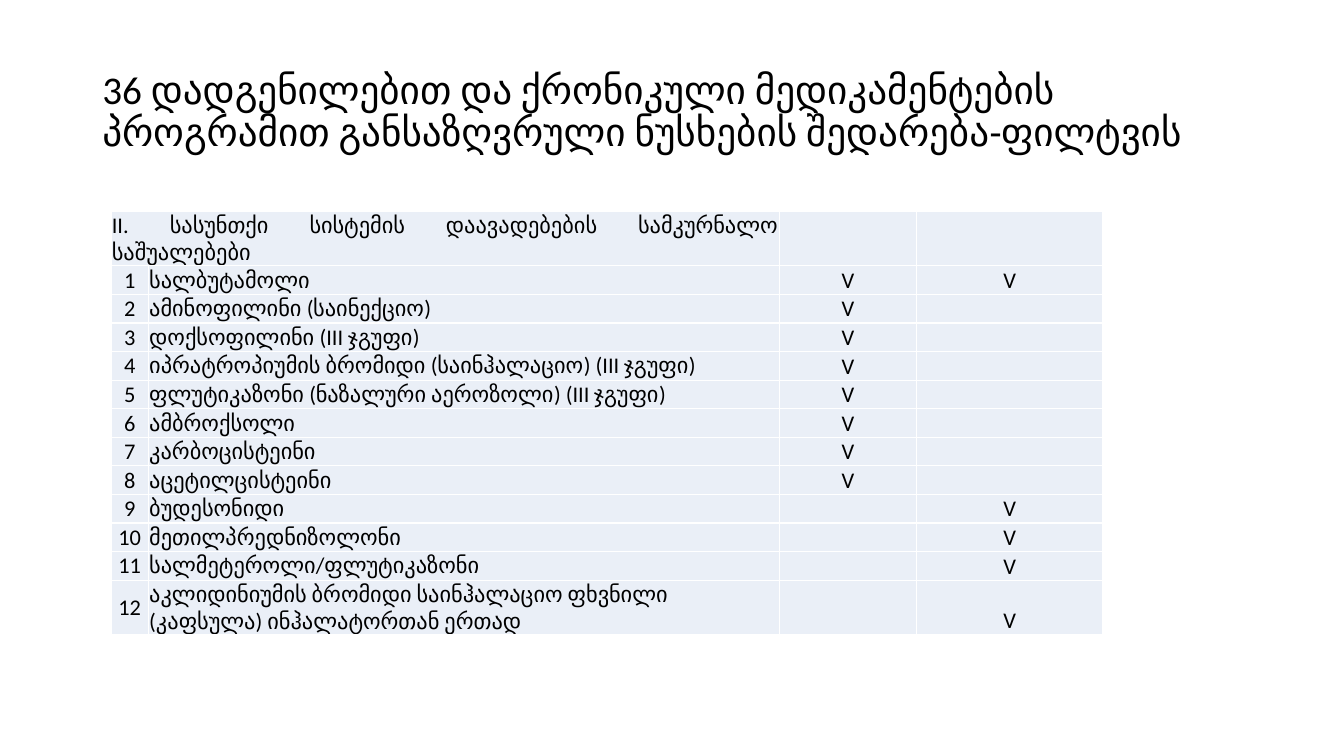
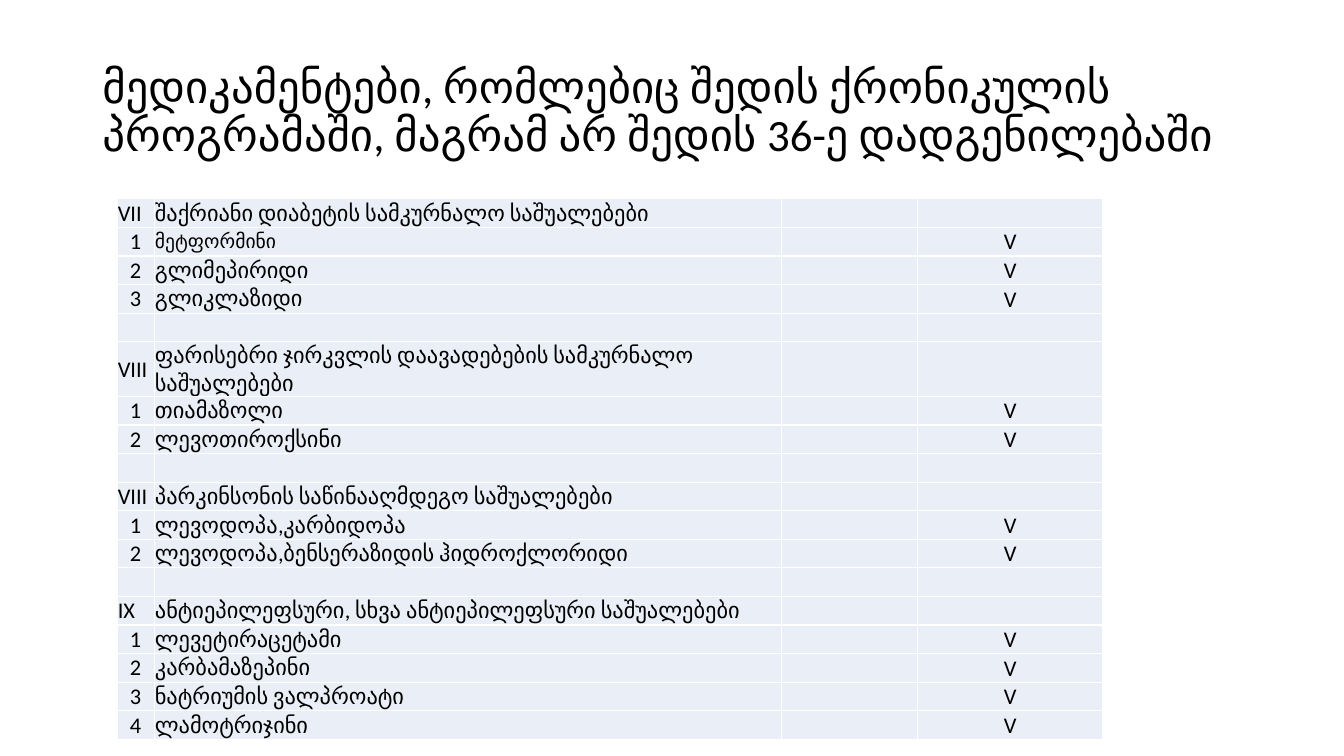
from lxml import etree
from pptx import Presentation
from pptx import util as u
from pptx.dml.color import RGBColor
from pptx.enum import text
from pptx.oxml.ns import qn

ALIGN, ANCHOR = text.PP_ALIGN, text.MSO_ANCHOR
MARK = "V"


def color(hex_string):
    return RGBColor.from_string(hex_string)


class Deck:
    """Shared style and the slide being built."""

    font_name = "Calibri"
    ink = "000000"
    cell_fill = "EAEFF7"
    body_size = 16
    column_widths = (0.94, 15.9, 3.45, 4.7)
    row_height, tall_row_height = 0.72, 1.38

    def __init__(self):
        self.presentation = Presentation()
        self.presentation.slide_width = u.Cm(33.87)
        self.presentation.slide_height = u.Cm(19.05)
        self.slide = None

    def add_slide(self):
        self.slide = self.presentation.slides.add_slide(self.presentation.slide_layouts[6])

    def style(self, paragraph, size):
        paragraph.font.name = self.font_name
        paragraph.font.size = u.Pt(size)
        paragraph.font.color.rgb = color(self.ink)

    def title(self, wording, size):
        box = self.slide.shapes.add_textbox(u.Cm(2.33), u.Cm(1.01), u.Cm(29.21), u.Cm(3.68))
        frame = box.text_frame
        frame.word_wrap = True
        frame.vertical_anchor = ANCHOR.MIDDLE
        paragraph = frame.paragraphs[0]
        paragraph.text = wording
        paragraph.line_spacing = 0.9
        self.style(paragraph, size)

    def cell(self, cell, wording, align, anchor, size):
        cell.fill.solid()
        cell.fill.fore_color.rgb = color(self.cell_fill)
        cell.margin_left = cell.margin_right = cell.margin_top = u.Cm(0.02)
        cell.margin_bottom = 0
        cell.vertical_anchor = anchor
        paragraph = cell.text_frame.paragraphs[0]
        paragraph.alignment = align
        self.style(paragraph, size)
        if wording:
            paragraph.text = wording
        else:  # keeps an empty row as low as a filled one
            etree.SubElement(paragraph._p, qn("a:endParaRPr"), sz=str(size * 100))

    def table(self, left, top, width, rows, tall_rows, small_rows=()):
        heights = [self.tall_row_height if index in tall_rows else self.row_height
                   for index in range(len(rows))]
        table = self.slide.shapes.add_table(
            len(rows), len(self.column_widths),
            u.Cm(left), u.Cm(top), u.Cm(width), u.Cm(sum(heights))).table
        table.first_row = table.horz_banding = False
        scale = width / sum(self.column_widths)
        for column, column_width in zip(table.columns, self.column_widths):
            column.width = u.Cm(column_width * scale)

        for index, (number, name, *marks) in enumerate(rows):
            table.rows[index].height = u.Cm(heights[index])
            cells = table.rows[index].cells
            number_align = ALIGN.CENTER if number.isdigit() else ALIGN.LEFT
            name_size = 14 if index in small_rows else self.body_size
            if name is None:  # a heading across the first two columns
                cells[0].merge(cells[1])
                number_align = ALIGN.JUSTIFY
            self.cell(cells[0], number, number_align, ANCHOR.MIDDLE, self.body_size)
            self.cell(cells[1], name, ALIGN.LEFT, ANCHOR.MIDDLE, name_size)
            for cell, mark in zip(list(cells)[2:], marks):
                self.cell(cell, mark, ALIGN.CENTER, ANCHOR.BOTTOM, self.body_size)


def numbered(names, *marks, start=1):
    return [(str(number), name, *marks) for number, name in enumerate(names, start)]


def section(numeral, heading, names):
    return [(numeral, heading, "", "")] + numbered(names, "", MARK)


def main():
    deck = Deck()
    blank_row = [("", "", "", "")]

    # Respiratory medicines: resolution 36 against the chronic programme
    deck.add_slide()
    deck.title("36 დადგენილებით და ქრონიკული მედიკამენტების პროგრამით "
               "განსაზღვრული ნუსხების შედარება-ფილტვის", 28)
    resolution_only = [
        "ამინოფილინი (საინექციო)",
        "დოქსოფილინი (III ჯგუფი)",
        "იპრატროპიუმის ბრომიდი (საინჰალაციო) (III ჯგუფი)",
        "ფლუტიკაზონი (ნაზალური აეროზოლი) (III ჯგუფი)",
        "ამბროქსოლი",
        "კარბოცისტეინი",
        "აცეტილცისტეინი",
    ]
    programme_only = [
        "ბუდესონიდი",
        "მეთილპრედნიზოლონი",
        "სალმეტეროლი/ფლუტიკაზონი",
        "აკლიდინიუმის ბრომიდი საინჰალაციო ფხვნილი (კაფსულა) ინჰალატორთან ერთად",
    ]
    rows = (
        [("II. სასუნთქი სისტემის დაავადებების სამკურნალო საშუალებები", None, "", "")]
        + numbered(["სალბუტამოლი"], MARK, MARK)
        + numbered(resolution_only, MARK, "", start=2)
        + numbered(programme_only, "", MARK, start=9)
    )
    deck.table(2.8, 5.32, 25, rows, tall_rows=(0, 12))

    # Medicines found only in the chronic programme
    deck.add_slide()
    deck.title("მედიკამენტები, რომლებიც შედის ქრონიკულის პროგრამაში, "
               "მაგრამ არ შედის 36-ე დადგენილებაში", 32)
    rows = (
        section("VII", "შაქრიანი დიაბეტის სამკურნალო საშუალებები",
                ["მეტფორმინი", "გლიმეპირიდი", "გლიკლაზიდი"])
        + blank_row
        + section("VIII", "ფარისებრი ჯირკვლის დაავადებების სამკურნალო საშუალებები",
                  ["თიამაზოლი", "ლევოთიროქსინი"])
        + blank_row
        + section("VIII", "პარკინსონის საწინააღმდეგო საშუალებები",
                  ["ლევოდოპა,კარბიდოპა", "ლევოდოპა,ბენსერაზიდის ჰიდროქლორიდი"])
        + blank_row
        + section("IX", "ანტიეპილეფსური, სხვა ანტიეპილეფსური საშუალებები",
                  ["ლევეტირაცეტამი", "კარბამაზეპინი", "ნატრიუმის ვალპროატი", "ლამოტრიჯინი"])
    )
    deck.table(2.95, 5.01, 24.85, rows, tall_rows=(5,), small_rows=(1,))

    deck.presentation.save("out.pptx")


if __name__ == "__main__":
    main()
